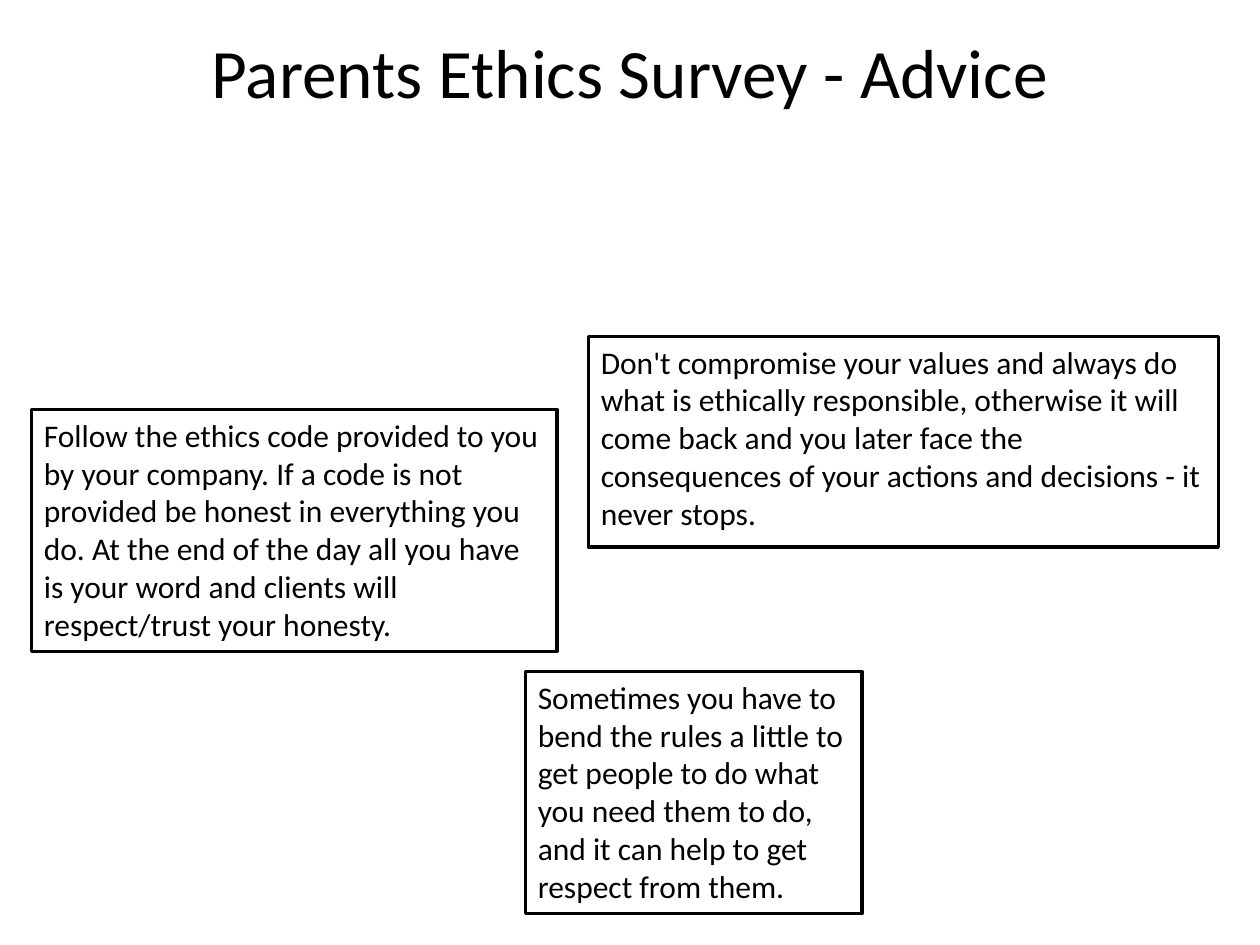
from dataclasses import dataclass

from pptx import Presentation
from pptx.dml.color import RGBColor
from pptx.enum.text import MSO_ANCHOR as Anchor, PP_ALIGN as Align
from pptx.util import Inches, Pt


@dataclass(frozen=True)
class Theme:
    font: str = "Calibri"
    ink: RGBColor = RGBColor(0, 0, 0)
    title_size: float = 39.6
    body_size: float = 18
    border: float = 2


@dataclass(frozen=True)
class Advice:
    left: float
    top: float
    width: float
    height: float
    text: str


THEME = Theme()

ADVICE = (
    Advice(0.25, 3.25, 4.17, 1.92,
           "Follow the ethics code provided to you by your company. If a code is not "
           "provided be honest in everything you do. At the end of the day all you have "
           "is your word and clients will respect/trust your honesty."),
    Advice(4.67, 2.67, 5, 1.67,
           "Don't compromise your values and always do what is ethically responsible, "
           "otherwise it will come back and you later face the consequences of your "
           "actions and decisions - it never stops."),
    Advice(4.17, 5.33, 2.67, 1.92,
           "Sometimes you have to bend the rules a little to get people to do what you "
           "need them to do, and it can help to get respect from them."),
)


def add_text(page, left: float, top: float, width: float, height: float,
             text: str, size: float, align: Align = Align.LEFT,
             anchor: Anchor = Anchor.TOP):
    box = page.shapes.add_textbox(Inches(left), Inches(top), Inches(width), Inches(height))
    frame = box.text_frame
    frame.word_wrap = True
    frame.vertical_anchor = anchor
    para = frame.paragraphs[0]
    para.text = text
    para.alignment = align
    para.font.name = THEME.font
    para.font.size = Pt(size)
    para.font.color.rgb = THEME.ink
    return box


def add_advice(page, advice: Advice) -> None:
    box = add_text(page, advice.left, advice.top, advice.width, advice.height,
                   advice.text, THEME.body_size)
    box.line.color.rgb = THEME.ink
    box.line.width = Pt(THEME.border)


def main() -> None:
    deck = Presentation()
    deck.slide_width, deck.slide_height = Inches(10), Inches(7.5)
    page = deck.slides.add_slide(deck.slide_layouts[6])

    # Title
    add_text(page, 0.5, 0.3, 9, 0.53, "Parents Ethics Survey - Advice",
             THEME.title_size, Align.CENTER, Anchor.MIDDLE)

    # Framed pieces of advice
    for advice in ADVICE:
        add_advice(page, advice)

    deck.save("out.pptx")


if __name__ == "__main__":
    main()
